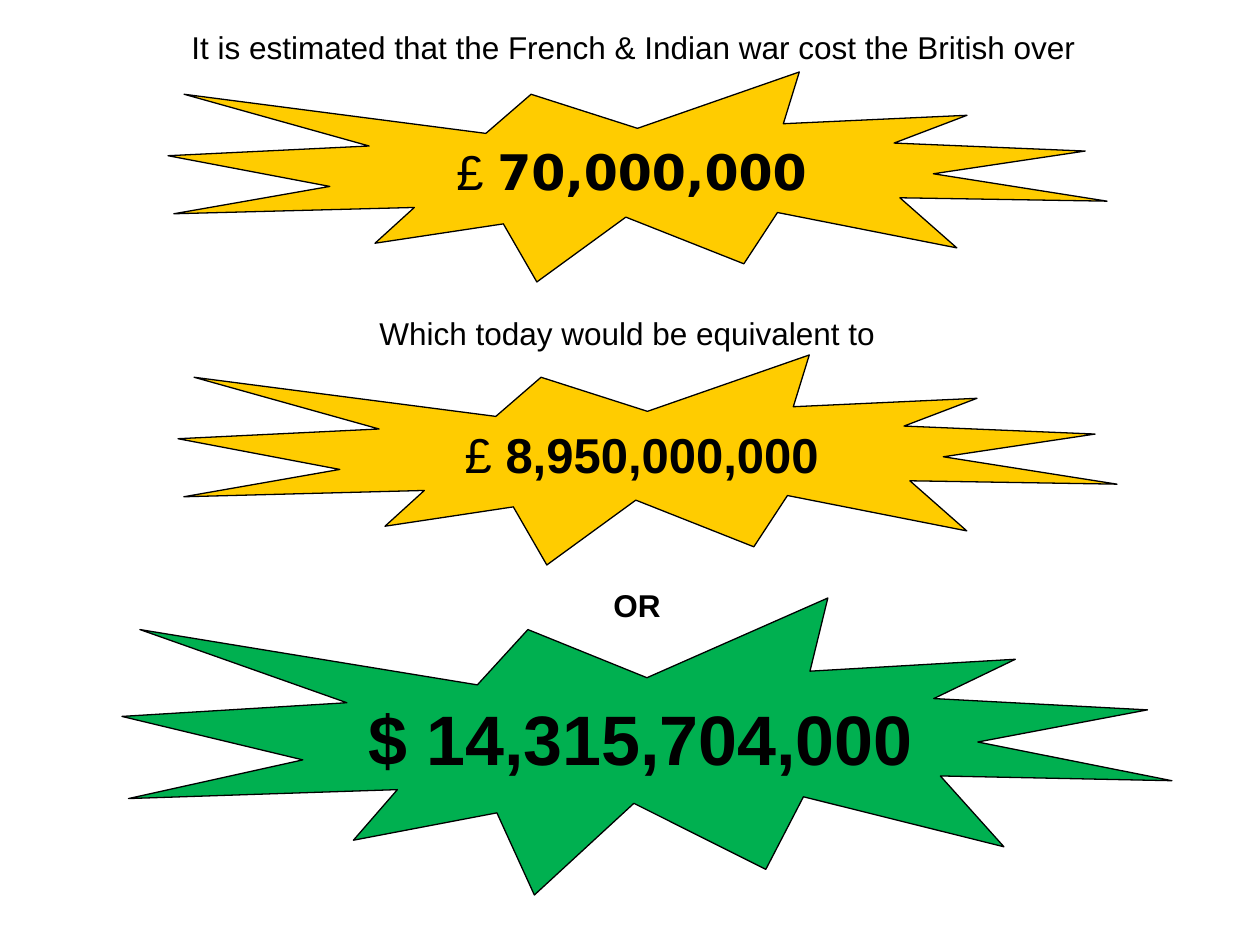
from pptx import Presentation
from pptx.dml.color import RGBColor
from pptx.enum.shapes import MSO_SHAPE as Shape
from pptx.enum.text import MSO_ANCHOR as Anchor, PP_ALIGN as Align
from pptx.util import Pt

PX = 914400 // 126
BLACK = RGBColor(0, 0, 0)
GOLD = RGBColor(0xFF, 0xCC, 0x00)
GREEN = RGBColor(0x00, 0xB0, 0x50)
SANS = "Arial"

LABELS = [
    ("It is estimated that the French & Indian war cost the British over",
     (179, 22, 917, 50), False),
    ("Which today would be equivalent to", (367, 308, 525, 50), False),
    ("OR", (601, 580, 73, 50), True),
]
BURSTS = [
    ((168, 72, 939, 210), GOLD, 28,
     [("£ ", SANS, False), ("70,000,000", "DejaVu Sans", True)]),
    ((178, 355, 939, 210), GOLD, 28,
     [("£ ", SANS, False), ("8,950,000,000", SANS, True)]),
    ((122, 598, 1050, 297), GREEN, 40, [("$ 14,315,704,000", SANS, True)]),
]


def scale(box):
    return [n * PX for n in box]


def write(para, runs, size):
    for text, face, bold in runs:
        run = para.add_run()
        run.text = text
        font = run.font
        font.name, font.size, font.bold = face, Pt(size), bold
        font.color.rgb = BLACK


def add_label(slide, text, box, bold):
    frame = slide.shapes.add_textbox(*scale(box)).text_frame
    frame.word_wrap = False
    write(frame.paragraphs[0], [(text, SANS, bold)], 18)


def add_burst(slide, box, fill, size, runs):
    burst = slide.shapes.add_shape(Shape.EXPLOSION1, *scale(box))
    burst.shadow.inherit = False
    burst.fill.solid()
    burst.fill.fore_color.rgb = fill
    burst.line.color.rgb = BLACK
    burst.line.width = Pt(0.75)
    frame = burst.text_frame
    frame.word_wrap = False
    frame.vertical_anchor = Anchor.MIDDLE
    para = frame.paragraphs[0]
    para.alignment = Align.CENTER
    write(para, runs, size)


def main():
    deck = Presentation()
    deck.slide_width, deck.slide_height = scale((1260, 945))
    slide = deck.slides.add_slide(deck.slide_layouts[6])
    for label, burst in zip(LABELS, BURSTS):
        add_label(slide, *label)
        add_burst(slide, *burst)
    deck.save("out.pptx")


if __name__ == "__main__":
    main()
